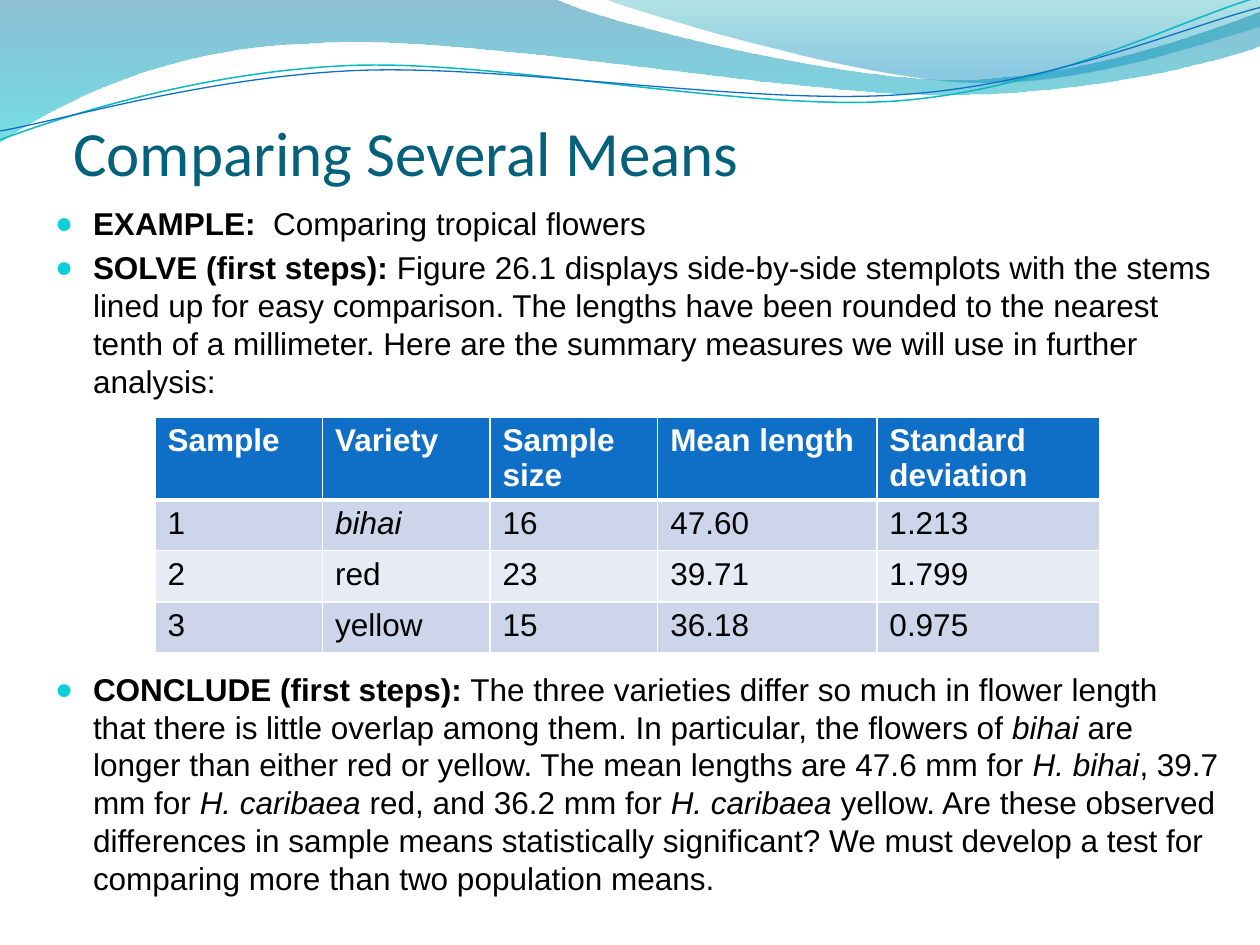
from math import cos, radians, sin

from lxml import etree
from pptx import Presentation
from pptx.dml.color import RGBColor
from pptx.enum.text import MSO_ANCHOR
from pptx.oxml.ns import qn
from pptx.util import Inches, Pt

BOTTOM = MSO_ANCHOR.BOTTOM
BLUE, WHITE, BLACK = "0F6FC6", "FFFFFF", "000000"
BANDS = ("CCD5EA", "E7EBF5")
TILT = -2.7

WAVES = [
    ([(0, 0), (4.4, -0.01), (4.76, 0.17, 6.64, 0.63, 7.58, 0.63),
      (8.53, 0.63, 9.58, 0.26, 10, 0.09), (10.01, 0.36),
      (9.83, 0.44, 8.7, 0.76, 7.46, 0.75), (6.22, 0.75, 3.82, 0.28, 2.57, 0.34),
      (1.29, 0.36, 0.46, 0.83, -0.01, 1.13), (0, 0)],
     [(0, "0074A1", 45), (1, "00C6CF", 55)]),
    ([(4.79, -0.01), (5.09, 0.11, 6.82, 0.62, 7.69, 0.65),
      (8.56, 0.69, 9.61, 0.32, 10, 0.21), (10, 0), (4.79, -0.01)],
     [(0, "00A1A9", 30), (0.8, "008BBF", 45)]),
]
CURVES = [
    ([(0, 1.11), (0.48, 0.93, 1.58, 0.57, 2.77, 0.52),
      (3.95, 0.47, 5.93, 0.89, 7.13, 0.8), (8.33, 0.71, 9.38, 0.15, 9.98, -0.02)],
     (4.99, 0.57), "0AB8BF", 0.85),
    ([(0, 1.04), (0.47, 0.96, 1.64, 0.61, 2.83, 0.56),
      (4.03, 0.51, 5.97, 0.84, 7.17, 0.75), (8.36, 0.67, 9.41, 0.21, 10, 0.06)],
     (5, 0.59), BLUE, 0.75),
]
BODY = [
    (0, [("EXAMPLE:", "b"), ("  Comparing tropical flowers", "")]),
    (3.6, [("SOLVE (first steps):", "b"),
           (" Figure 26.1 displays side-by-side stemplots with the stems lined up for easy "
            "comparison. The lengths have been rounded to the nearest tenth of a millimeter. "
            "Here are the summary measures we will use in further analysis:", "")]),
    (154.6, [("CONCLUDE (first steps):", "b"),
             (" The three varieties differ so much in flower length that there is little overlap "
              "among them. In particular, the flowers of ", ""),
             ("bihai", "i"),
             (" are longer than either red or yellow. The mean lengths are 47.6 mm for ", ""),
             ("H. bihai", "i"), (", 39.7 mm for ", ""), ("H. caribaea ", "i"),
             ("red, and 36.2 mm for ", ""), ("H. caribaea ", "i"),
             ("yellow. Are these observed differences in sample means statistically significant? "
              "We must develop a test for comparing more than two population means.", "")]),
]
ROWS = [
    ("Sample", "Variety", "Sample size", "Mean length", "Standard deviation"),
    ("1", "bihai", "16", "47.60", "1.213"),
    ("2", "red", "23", "39.71", "1.799"),
    ("3", "yellow", "15", "36.18", "0.975"),
]
COL_WIDTHS = (1.33, 1.33, 1.33, 1.74, 1.77)
ROW_HEIGHTS = (0.66, 0.4, 0.41, 0.4)


def rgb(value):
    """Turn a hex string into a colour."""
    return RGBColor.from_string(value)


def pairs(seg):
    """Split a flat segment into its points."""
    return list(zip(seg[::2], seg[1::2]))


def level(seg, center):
    """Turn a segment about the center so that the tilt brings it back."""
    c, s = cos(radians(-TILT)), sin(radians(-TILT))
    turned = ()
    for x, y in pairs(seg):
        dx, dy = x - center[0], y - center[1]
        turned += (center[0] + c * dx - s * dy, center[1] + s * dx + c * dy)
    return turned


def add_outline(slide, segments, close):
    """Add a freeform of straight lines and cubic Bezier segments."""
    points = [(Inches(x), Inches(y)) for seg in segments for x, y in pairs(seg)]
    builder = slide.shapes.build_freeform(*points[0])
    builder.add_line_segments(points[1:], close=close)
    sp = builder.convert_to_shape()
    sp.shadow.inherit = False
    lines = iter(list(sp._element.spPr.iter(qn("a:lnTo"))))
    for seg in segments[1:]:
        first = next(lines)
        if len(seg) == 6:
            first.tag = qn("a:cubicBezTo")
            for _ in range(2):
                line = next(lines)
                first.append(line[0])
                line.getparent().remove(line)
    return sp


def add_wave(slide, segments, stops):
    """Add a closed wave with a translucent vertical gradient."""
    sp = add_outline(slide, segments, True)
    sp.line.fill.background()
    sp.fill.gradient()
    sp.fill.gradient_angle = 270
    for stop, (position, color, _) in zip(sp.fill.gradient_stops, stops):
        stop.position = position
        stop.color.rgb = rgb(color)
    for clr, (_, _, alpha) in zip(sp._element.spPr.iter(qn("a:srgbClr")), stops):
        etree.SubElement(clr, qn("a:alpha"), val=str(alpha * 1000))


def add_curve(slide, segments, center, color, width):
    """Add an open, slightly tilted curved line."""
    sp = add_outline(slide, [level(seg, center) for seg in segments], False)
    sp.rotation = TILT
    sp.fill.background()
    sp.line.color.rgb = rgb(color)
    sp.line.width = Pt(width)


def add_run(p, text, color, size=18, font="Arial", style=""):
    """Add a run; style holds b for bold and i for italic."""
    r = p.add_run()
    r.text = text
    r.font.name, r.font.size = font, Pt(size)
    r.font.bold, r.font.italic = "b" in style, "i" in style
    r.font.color.rgb = rgb(color)


def add_title(slide, text):
    """Add the title, anchored to the bottom of its box."""
    tf = slide.shapes.add_textbox(Inches(0.58), Inches(0.17), Inches(9.19), Inches(1.33)).text_frame
    tf.word_wrap = True
    tf.vertical_anchor = BOTTOM
    tf.margin_left = tf.margin_right = tf.margin_bottom = 0
    add_run(tf.paragraphs[0], text, "04617B", 36, "Calibri")


def set_bullet(p):
    """Give a paragraph a hanging round bullet."""
    pPr = p._p.get_or_add_pPr()
    pPr.set("marL", str(Inches(0.3)))
    pPr.set("indent", str(Inches(-0.3)))
    clr = etree.SubElement(pPr, qn("a:buClr"))
    etree.SubElement(clr, qn("a:srgbClr"), val="0BD0D9")
    etree.SubElement(pPr, qn("a:buSzPct"), val="95000")
    etree.SubElement(pPr, qn("a:buFont"), typeface="Arial")
    etree.SubElement(pPr, qn("a:buChar"), char="●")


def add_body(slide, paragraphs):
    """Add the bulleted text, leaving room for the table."""
    tf = slide.shapes.add_textbox(Inches(0.34), Inches(1.57), Inches(9.43), Inches(5.48)).text_frame
    tf.word_wrap = True
    for i, (before, runs) in enumerate(paragraphs):
        p = tf.add_paragraph() if i else tf.paragraphs[0]
        p.line_spacing = Pt(21.6)
        p.space_before = Pt(before)
        set_bullet(p)
        for text, style in runs:
            add_run(p, text, BLACK, style=style)


def set_borders(cell, top, bottom):
    """Draw white borders around a cell."""
    tcPr = cell._tc.get_or_add_tcPr()
    for side, width in (("L", 1), ("R", 1), ("T", top), ("B", bottom)):
        ln = etree.SubElement(tcPr, qn(f"a:ln{side}"), w=str(Pt(width)))
        fill = etree.SubElement(ln, qn("a:solidFill"))
        etree.SubElement(fill, qn("a:srgbClr"), val=WHITE)


def add_summary_table(slide, rows):
    """Add the table of summary measures."""
    table = slide.shapes.add_table(
        len(rows), len(COL_WIDTHS), Inches(1.23), Inches(3.31),
        Inches(sum(COL_WIDTHS)), Inches(sum(ROW_HEIGHTS))).table
    for col, width in zip(table.columns, COL_WIDTHS):
        col.width = Inches(width)
    for i, values in enumerate(rows):
        table.rows[i].height = Inches(ROW_HEIGHTS[i])
        for j, text in enumerate(values):
            cell = table.cell(i, j)
            set_borders(cell, 3 if i == 1 else 1, 3 if i == 0 else 1)
            cell.fill.solid()
            cell.fill.fore_color.rgb = rgb(BANDS[(i - 1) % 2] if i else BLUE)
            p = cell.text_frame.paragraphs[0]
            p.line_spacing = Pt(20)
            style = "b" if i == 0 else "i" if text == "bihai" else ""
            add_run(p, text, BLACK if i else WHITE, style=style)


def main():
    """Build the slide and save it."""
    prs = Presentation()
    prs.slide_width, prs.slide_height = Inches(10), Inches(7.5)
    s = prs.slides.add_slide(prs.slide_layouts[6])
    for wave in WAVES:
        add_wave(s, *wave)
    for curve in CURVES:
        add_curve(s, *curve)
    add_title(s, "Comparing Several Means")
    add_body(s, BODY)
    add_summary_table(s, ROWS)
    prs.save("out.pptx")


if __name__ == "__main__":
    main()
